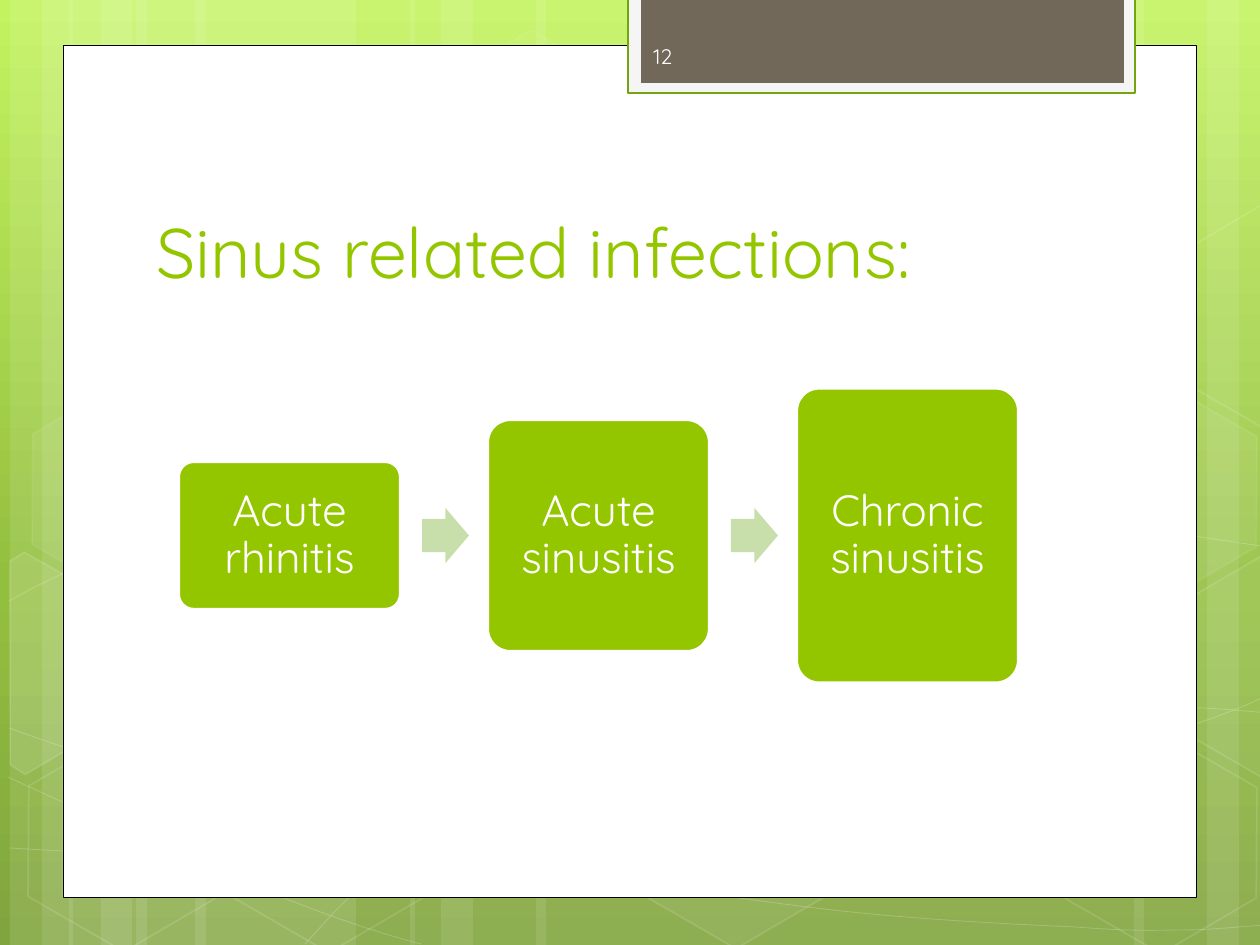
"""Build the slide on sinus related infections."""
import copy
import math

import pptx
import pptx.dml.color
import pptx.enum.shapes
import pptx.enum.text
import pptx.oxml
import pptx.oxml.ns
import pptx.util

SCALE = 914400 / 126
KIND = pptx.enum.shapes.MSO_SHAPE
ALIGN = pptx.enum.text.PP_ALIGN
ANCHOR = pptx.enum.text.MSO_ANCHOR
qn = pptx.oxml.ns.qn
WHITE, GREEN = "FFFFFF", "94C600"
TURN = 30

STRIPES = [(136, 220), (10, 63), (42, 105), (195, 220), (69, 63), (101, 105),
           (924, 220), (1207, 63), (1134, 105), (536, 388), (410, 63), (441, 105)]
CURVES = [
    [(9, 848), (77, 852), (145, 856), (239, 854), (334, 853), (451, 851), (577, 838),
     (703, 825), (882, 801), (998, 777), (1113, 753), (1231, 716), (1269, 694)],
    [(9, 601), (45, 581), (82, 562), (152, 543), (224, 522), (326, 496), (437, 488),
     (549, 479), (685, 478), (824, 488), (963, 498), (1193, 537), (1269, 547)],
    [(8, 777), (160, 847), (311, 916), (421, 944)],
    [(9, 728), (48, 742), (88, 756), (161, 776), (234, 795), (344, 827), (450, 848),
     (554, 869), (687, 892), (791, 905), (896, 919), (1008, 924), (1075, 927),
     (1140, 932), (1158, 930), (1191, 930), (1223, 929), (1246, 926), (1269, 925)],
    [(305, 944), (328, 919), (350, 893), (381, 871), (411, 848), (454, 823), (489, 805),
     (524, 788), (546, 780), (592, 767), (638, 755), (722, 737), (766, 728),
     (811, 719), (818, 719), (857, 717), (896, 713), (958, 709), (1000, 708),
     (1045, 707), (1116, 708), (1116, 708), (1144, 708), (1173, 708), (1201, 708),
     (1223, 709), (1245, 711), (1256, 712), (1268, 713), (1264, 712), (1268, 713)],
]
HEXES = [(421, 45, 4, 8), (626, 742, 6, 12), (14, 745, 0, 12), (18, 393, 7, 8),
         (219, 746, 0, 12), (949, 571, 10, 12), (1051, 747, 0, 12), (1051, 396, 7, 8)]
EDGES = [
    ((45, 674), 10,
     [(10, 561), (24, 552), (121, 607), (120, 718), (25, 774), (10, 765)]),
    ((1241, 655), 4,
     [(1167, 611), (1261, 556), (1271, 562), (1271, 772), (1263, 777), (1167, 722)]),
    ((1241, 304), 0,
     [(1167, 261), (1261, 205), (1273, 212), (1271, 422), (1263, 427), (1167, 372)]),
]
CARDS = [("Acute rhinitis", 147), ("Acute sinusitis", 231), ("Chronic sinusitis", 294)]


def px(num):
    """Turn pixels into EMU."""
    return pptx.util.Emu(round(num * SCALE))


def tint(code):
    """Turn a hex string into a colour."""
    return pptx.dml.color.RGBColor.from_string(code)


def fade(node, pct):
    """Set the opacity of the solid fill under a node."""
    hue = node.find(qn("a:solidFill")).find(qn("a:srgbClr"))
    hue.append(pptx.oxml.parse_xml(
        f'<a:alpha {pptx.oxml.ns.nsdecls("a")} val="{pct * 1000}"/>'))


def style(shape, fill=None, line=None, width=1, veil=100, mist=100):
    """Give a shape its fill and line, with their opacities."""
    shape.shadow.inherit = False
    props = shape.element.spPr
    if fill:
        shape.fill.solid()
        shape.fill.fore_color.rgb = tint(fill)
        if veil < 100:
            fade(props, veil)
    else:
        shape.fill.background()
    if line:
        shape.line.color.rgb = tint(line)
        shape.line.width = pptx.util.Pt(width)
        if mist < 100:
            fade(props.find(qn("a:ln")), mist)
    else:
        shape.line.fill.background()
    return shape


def block(home, kind, box, **look):
    """Add a preset shape."""
    return style(home.shapes.add_shape(kind, *map(px, box)), **look)


def trace(home, dots, close, **look):
    """Add an outline through the given points."""
    pen = home.shapes.build_freeform(*dots[0], scale=SCALE)
    pen.add_line_segments(dots[1:], close=close)
    return style(pen.convert_to_shape(), **look)


def bend(shape):
    """Turn each three line steps of an outline into one cubic curve."""
    steps = list(shape.element.iter(qn("a:lnTo")))
    for i in range(0, len(steps), 3):
        curve = steps[i].makeelement(qn("a:cubicBezTo"), {})
        steps[i].addprevious(curve)
        for step in steps[i:i + 3]:
            curve.append(step[0])
            step.getparent().remove(step)


def spin(dots, mid):
    """Turn points back about a centre, so that the shape can be rotated."""
    cos, sin = math.cos(math.radians(TURN)), math.sin(math.radians(TURN))
    moves = [(x - mid[0], y - mid[1]) for x, y in dots]
    return [(round(mid[0] + x * cos + y * sin), round(mid[1] - x * sin + y * cos))
            for x, y in moves]


def write(shape, text, size, color, anchor, align=ALIGN.LEFT):
    """Write one run of text into a shape."""
    frame = shape.text_frame
    frame.word_wrap = True
    frame.vertical_anchor = anchor
    para = frame.paragraphs[0]
    para.alignment = align
    run = para.add_run()
    run.text = text
    run.font.name = "Quicksand"
    run.font.size = pptx.util.Pt(size)
    run.font.color.rgb = tint(color)
    return frame


def label(home, box, *words):
    """Add a text box."""
    write(home.shapes.add_textbox(*map(px, box)), *words)


def wash(slide):
    """Fill the background with a three stop gradient."""
    fill = slide.background.fill
    fill.gradient()
    fill.gradient_angle = 270
    first = next(slide.element.iter(qn("a:gs")))
    first.addnext(copy.deepcopy(first))
    stops = zip(fill.gradient_stops, (0, 0.62, 1), ("C3F35F", "93BF3F", "81A53E"))
    for stop, place, code in stops:
        stop.position = place
        stop.color.rgb = tint(code)


def decor(slide):
    """Draw the stripes, curves and hexagons behind the panel."""
    group = slide.shapes.add_group_shape()
    for left, width in STRIPES:
        block(group, KIND.RECTANGLE, (left, 0, width, 945), fill=WHITE, veil=10)
    for knots in CURVES:
        bend(trace(group, knots, False, line=WHITE, width=0.5, mist=20))
    for left, top, veil, mist in HEXES:
        cell = block(group, KIND.HEXAGON, (left, top, 220, 192), line=WHITE,
                     fill=WHITE if veil else None, veil=veil, mist=mist)
        cell.adjustments[0] = 0.285
        cell.rotation = TURN
    for mid, veil, dots in EDGES:
        edge = trace(group, spin(dots, mid), True, line=WHITE, mist=12,
                     fill=WHITE if veil else None, veil=veil)
        edge.rotation = TURN


def panel(slide):
    """Draw the white panel and the tab at its top."""
    block(slide, KIND.RECTANGLE, (63, 45, 1134, 853), fill=WHITE, line="000000", width=0.5)
    block(slide, KIND.RECTANGLE, (628, -3, 507, 96), fill="F5F5F5", line="74A510", width=1.25)
    block(slide, KIND.RECTANGLE, (641, -3, 483, 86), fill="71685A")


def card(home, left, high, text):
    """Draw one stage of the flow."""
    box = (left, 535.5 - high / 2, 221, high)
    shape = block(home, KIND.ROUNDED_RECTANGLE, box, fill=GREEN, line=WHITE, width=1.25)
    shape.adjustments[0] = 0.1
    frame = write(shape, text, 25, WHITE, ANCHOR.MIDDLE, ALIGN.CENTER)
    frame.margin_left = frame.margin_right = px(19)
    frame.paragraphs[0].line_spacing = 0.9


def flow(slide):
    """Draw the stages and the arrows between them."""
    group = slide.shapes.add_group_shape()
    for i, (text, high) in enumerate(CARDS):
        left = 179 + 309 * i
        if i:
            arrow = block(group, KIND.RIGHT_ARROW, (left - 66, 508, 47, 55), fill="C8DFAB")
            arrow.adjustments[0] = 0.6
        card(group, left, high, text)


def main():
    """Build and save the slide."""
    deck = pptx.Presentation()
    deck.slide_width, deck.slide_height = px(1260), px(945)
    slide = deck.slides.add_slide(deck.slide_layouts[6])
    wash(slide)
    decor(slide)
    panel(slide)
    label(slide, (144, 141, 968, 158), "Sinus related infections:", 40, GREEN, ANCHOR.BOTTOM)
    label(slide, (641, 31, 184, 50), "12", 12, "FEFEFE", ANCHOR.MIDDLE)
    flow(slide)
    deck.save("out.pptx")


if __name__ == "__main__":
    main()
